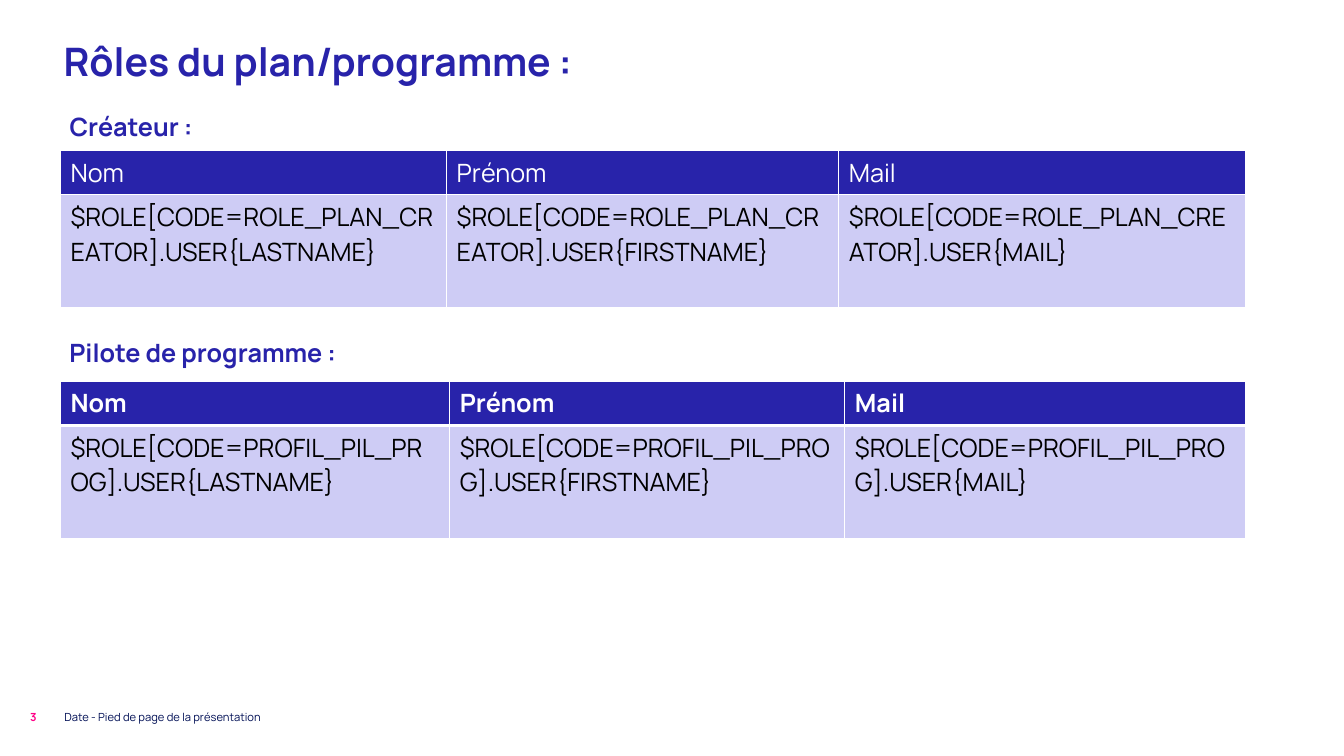
from lxml import etree
from pptx import Presentation
from pptx.dml.color import RGBColor
from pptx.enum import text
from pptx.oxml import ns
from pptx.util import Inches, Pt

BLUE = RGBColor(0x28, 0x23, 0xAA)
LILAC = RGBColor(0xCE, 0xCC, 0xF5)
NAVY = RGBColor(0x00, 0x0F, 0x55)
PINK = RGBColor(0xFF, 0x00, 0x87)
WHITE = RGBColor(0xFF, 0xFF, 0xFF)
BLACK = RGBColor(0x00, 0x00, 0x00)

TITLE = "Rôles du plan/programme :"
FOOTER = "Date - Pied de page de la présentation"
PAGE_NUMBER = "3"
HEADERS = ("Nom", "Prénom", "Mail")
FIELDS = ("LASTNAME", "FIRSTNAME", "MAIL")
ROLES = (
    {"label": "Créateur :", "code": "ROLE_PLAN_CREATOR",
     "label_box": (0.59, 1.09, 12.2, 4.92), "table_top": 1.49,
     "widths": (3.83, 3.89, 4.03), "bold_header": False, "divider": 1},
    {"label": "Pilote de programme :", "code": "PROFIL_PIL_PROG",
     "label_box": (0.59, 3.33, 12.2, 2.94), "table_top": 3.78,
     "widths": (3.86, 3.92, 3.97), "bold_header": True, "divider": 3},
)
TABLE_LEFT = 0.6
ROW_HEIGHTS = (0.43, 1.12)

TOP, MIDDLE, BOTTOM = (text.MSO_ANCHOR.TOP, text.MSO_ANCHOR.MIDDLE,
                       text.MSO_ANCHOR.BOTTOM)


def format_paragraph(paragraph, color, size, bold):
    values = {"name": "Manrope", "size": Pt(size), "bold": bold}
    for name, value in values.items():
        setattr(paragraph.font, name, value)
    paragraph.font.color.rgb = color


def fill_box(shape, box, content, color, size, bold, anchor, margin=0.05, spacing=1.0):
    for name, value in zip(("left", "top", "width", "height"), box):
        setattr(shape, name, Inches(value))
    frame = shape.text_frame
    frame_format = {"word_wrap": True, "auto_size": text.MSO_AUTO_SIZE.NONE,
                    "vertical_anchor": anchor, "margin_left": Inches(0.1),
                    "margin_right": Inches(0.1), "margin_top": Inches(margin),
                    "margin_bottom": Inches(margin)}
    for name, value in frame_format.items():
        setattr(frame, name, value)
    frame.text = content
    paragraph = frame.paragraphs[0]
    paragraph_format = {"alignment": text.PP_ALIGN.LEFT, "space_before": Pt(0),
                        "line_spacing": spacing}
    for name, value in paragraph_format.items():
        setattr(paragraph, name, value)
    properties = paragraph._p.get_or_add_pPr()
    properties.set("marL", "0")
    properties.set("indent", "0")
    etree.SubElement(properties, ns.qn("a:buNone"))
    format_paragraph(paragraph, color, size, bold)


def add_border(cell, side, width):
    properties = cell._tc.get_or_add_tcPr()
    line = etree.SubElement(properties, ns.qn(f"a:ln{side}"), w=str(Pt(width)))
    fill = etree.SubElement(line, ns.qn("a:solidFill"))
    etree.SubElement(fill, ns.qn("a:srgbClr"), val=str(WHITE))


def add_role_table(slide, role):
    rows = (HEADERS,
            [f"$ROLE[CODE={role['code']}].USER{{{field}}}" for field in FIELDS])
    row_formats = ((BLUE, WHITE, role["bold_header"], {"B": role["divider"]}),
                   (LILAC, BLACK, False, {"T": role["divider"]}))
    table = slide.shapes.add_table(
        len(rows), len(HEADERS), Inches(TABLE_LEFT), Inches(role["table_top"]),
        Inches(sum(role["widths"])), Inches(sum(ROW_HEIGHTS))).table
    for column, width in zip(table.columns, role["widths"]):
        column.width = Inches(width)
    for row, height, contents, row_format in zip(table.rows, ROW_HEIGHTS, rows, row_formats):
        row.height = Inches(height)
        background, color, bold, borders = row_format
        for cell, content in zip(row.cells, contents):
            for side in "LRTB":
                add_border(cell, side, borders.get(side, 1))
            cell.fill.solid()
            cell.fill.fore_color.rgb = background
            cell.text = content
            format_paragraph(cell.text_frame.paragraphs[0], color, 18, bold)


def add_text_box(slide):
    return slide.shapes.add_textbox(0, 0, 0, 0)


def main():
    presentation = Presentation()
    presentation.slide_width = Inches(13.33)
    presentation.slide_height = Inches(7.5)
    slide = presentation.slides.add_slide(presentation.slide_layouts[1])

    fill_box(add_text_box(slide), (0.54, 6.97, 4.33, 0.28), FOOTER, NAVY, 8, False, MIDDLE)
    fill_box(add_text_box(slide), (0.2, 6.97, 0.59, 0.28), PAGE_NUMBER, PINK, 8, True, MIDDLE)
    fill_box(slide.shapes.title, (0.53, 0.29, 12.2, 0.55), TITLE, BLUE, 28, True, BOTTOM,
             margin=0)
    labels = (slide.placeholders[1], add_text_box(slide))
    for role, label in zip(ROLES, labels):
        fill_box(label, role["label_box"], role["label"], BLUE, 18, True, TOP, spacing=0.9)
        add_role_table(slide, role)

    presentation.save("out.pptx")


if __name__ == "__main__":
    main()
